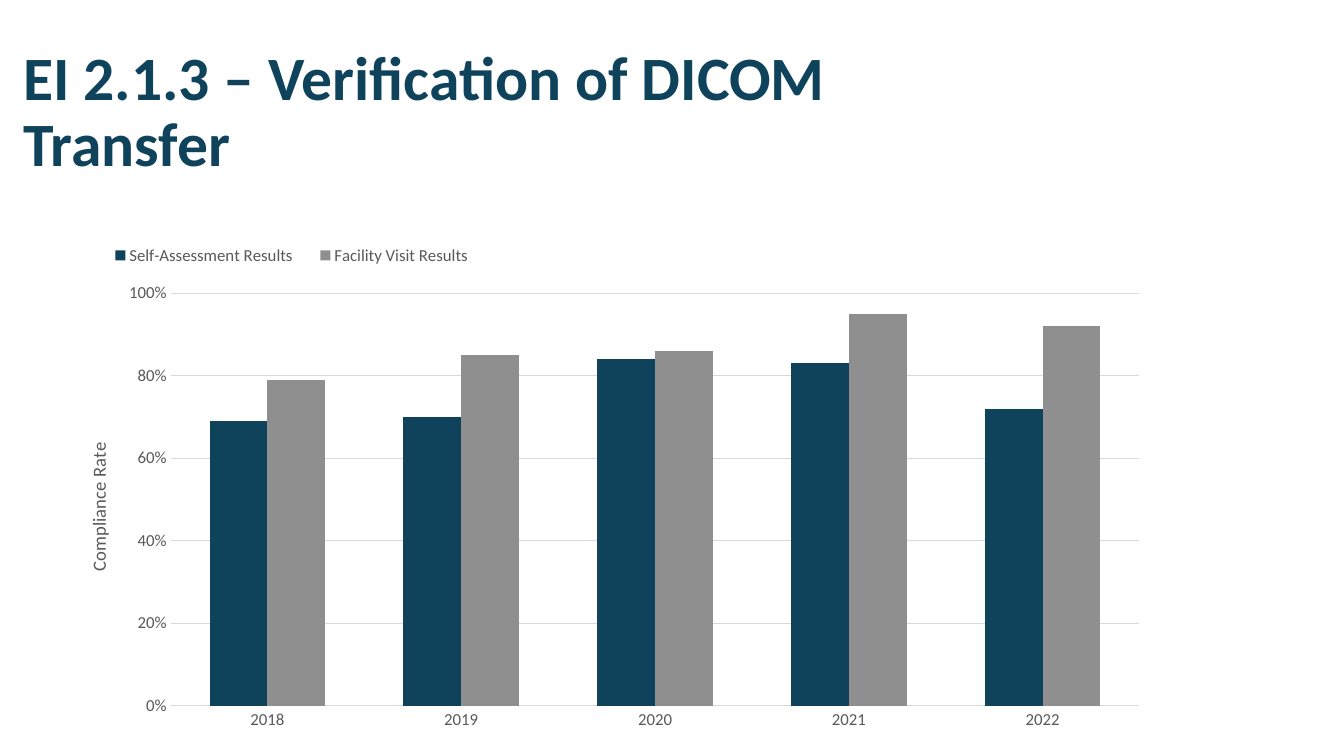
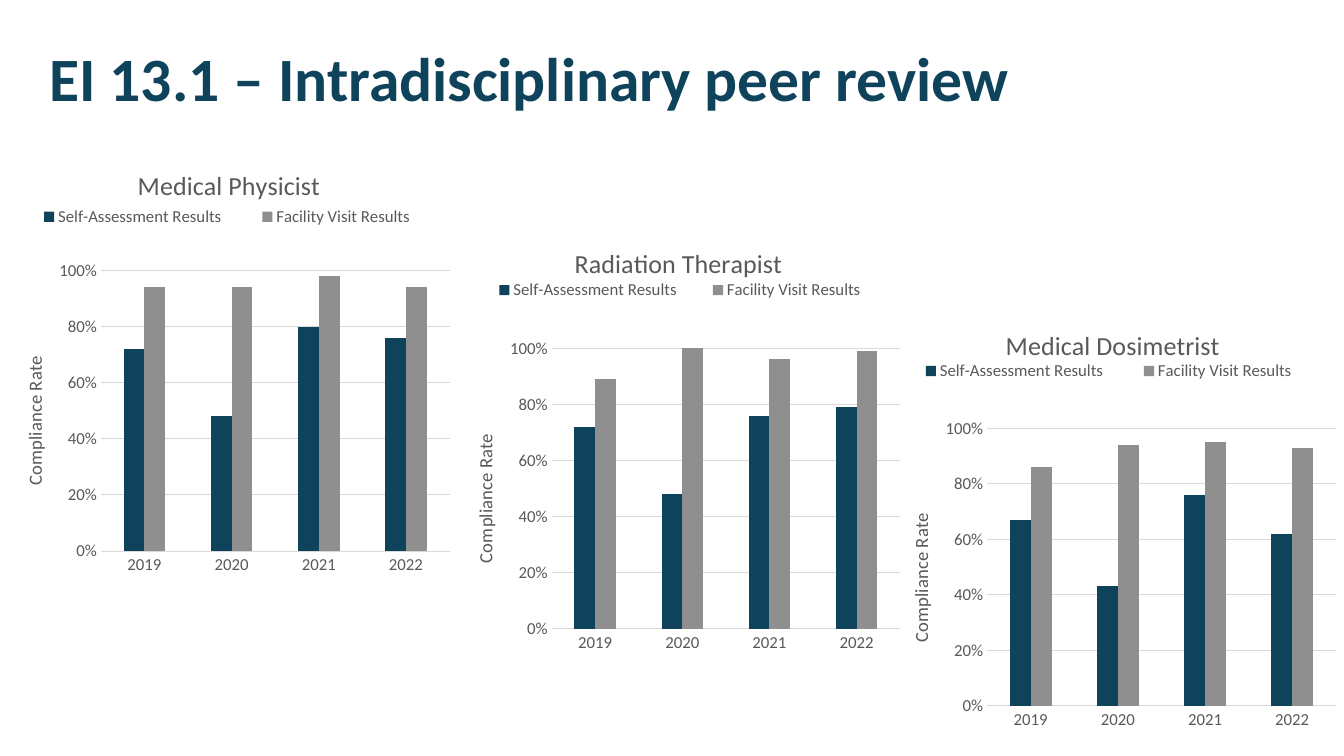
from dataclasses import dataclass
from typing import Optional

from lxml import etree
from pptx import Presentation
from pptx.chart.chart import Chart
from pptx.chart.data import CategoryChartData as ChartData
from pptx.dml.color import RGBColor as Rgb
from pptx.enum.chart import XL_CHART_TYPE as Kind
from pptx.enum.chart import XL_LEGEND_POSITION as Spot
from pptx.enum.chart import XL_TICK_MARK as Tick
from pptx.enum.text import MSO_ANCHOR as Anchor
from pptx.enum.text import MSO_AUTO_SIZE as Fit
from pptx.enum.text import PP_ALIGN as Align
from pptx.oxml.ns import qn
from pptx.slide import Slide
from pptx.util import Inches, Pt

COLORS = {"navy": "0F435B", "gray": "8F8F8F", "text": "595959", "grid": "D9D9D9"}
FONT = "Calibri"
SERIES = (("Self-Assessment Results", "navy"), ("Facility Visit Results", "gray"))
YEARS = ("2018", "2019", "2020", "2021", "2022")
TITLE_TOP = 0.02

Box = tuple[float, float, float, float]
Point = tuple[float, float]
Rates = tuple[float, ...]


@dataclass(frozen=True)
class Frame:
    """Parts of a chart, as shares of its width and height."""
    plot: Box
    label: Point
    gap: int


@dataclass(frozen=True)
class Bars:
    at: Box
    frame: Frame
    legend: Box
    own: Rates
    visit: Rates
    title: Optional[str] = None
    left: float = 0


@dataclass(frozen=True)
class Page:
    title: str
    at: Box
    charts: tuple[Bars, ...]


WIDE = Frame((0.1, 0.11, 0.88, 0.82), (0.02, 0.4), 135)
SMALL = Frame((0.22, 0.27, 0.76, 0.65), (0.04, 0.46), 219)

PAGES = (
    Page("EI 2.1.3 – Verification of DICOM Transfer", (0.13, 0.4, 9.86, 1.45), (
        Bars((0.6, 2.36, 10.92, 4.99), WIDE, (0.03, 0.01, 0.36, 0.05),
             (0.69, 0.7, 0.84, 0.83, 0.72), (0.79, 0.85, 0.86, 0.95, 0.92)),
    )),
    Page("EI 13.1 – Intradisciplinary peer review", (0.39, 0.08, 10.27, 1.45), (
        Bars((8.79, 3.11, 4.55, 4.23), SMALL, (0.01, 0.1, 0.95, 0.07),
             (0.67, 0.43, 0.76, 0.62), (0.86, 0.94, 0.95, 0.93),
             "Medical Dosimetrist", 0.25),
        Bars((0, 1.53, 4.55, 4.28), SMALL, (0.02, 0.11, 0.95, 0.07),
             (0.72, 0.48, 0.8, 0.76), (0.94, 0.94, 0.98, 0.94),
             "Medical Physicist", 0.29),
        Bars((4.47, 2.3, 4.55, 4.28), SMALL, (0.04, 0.1, 0.92, 0.07),
             (0.72, 0.48, 0.76, 0.79), (0.89, 1, 0.96, 0.99),
             "Radiation Therapist", 0.26),
    )),
)


def color(name: str) -> Rgb:
    return Rgb.from_string(COLORS[name])


def style(font, size: float, name: str = "text", bold: bool = False) -> None:
    font.name, font.size, font.bold = FONT, Pt(size), bold
    font.color.rgb = color(name)


def rule(line) -> None:
    line.color.rgb = color("grid")
    line.width = Pt(0.75)


def place(chart: Chart, part: str, index: int, box: tuple[float, ...]) -> None:
    """Fix a chart part at shares of the chart's size."""
    node = chart.element.xpath(f"c:chart/{part}")[0]
    for old in node.findall(qn("c:layout")):
        node.remove(old)
    layout = etree.Element(qn("c:layout"))
    manual = etree.SubElement(layout, qn("c:manualLayout"))
    pairs = [("xMode", "edge"), ("yMode", "edge"), *zip("xywh", box)]
    if part == "c:plotArea":
        pairs.insert(0, ("layoutTarget", "inner"))
    for tag, value in pairs:
        etree.SubElement(manual, qn(f"c:{tag}")).set("val", str(value))
    node.insert(index, layout)


def caption(holder, text: str, size: float) -> None:
    frame = holder.text_frame
    frame.text = text
    style(frame.paragraphs[0].runs[0].font, size)


def format_axes(chart: Chart) -> None:
    years, rates = chart.category_axis, chart.value_axis
    for axis in (years, rates):
        axis.major_tick_mark = axis.minor_tick_mark = Tick.NONE
        style(axis.tick_labels.font, 12)
    rule(years.format.line)
    rates.format.line.fill.background()
    rates.minimum_scale, rates.maximum_scale, rates.major_unit = 0, 1, 0.2
    rates.has_major_gridlines = True
    rule(rates.major_gridlines.format.line)
    rates.tick_labels.number_format = "0%"
    rates.tick_labels.number_format_is_linked = False
    caption(rates.axis_title, "Compliance Rate", 13.3)


def add_bars(slide: Slide, bars: Bars) -> None:
    data = ChartData(number_format="0%")
    data.categories = YEARS[-len(bars.own):]
    for (name, _), rates in zip(SERIES, (bars.own, bars.visit)):
        data.add_series(name, rates)
    chart = slide.shapes.add_chart(
        Kind.COLUMN_CLUSTERED, *map(Inches, bars.at), data).chart
    style(chart.font, 10)

    plot = chart.plots[0]
    plot.gap_width, plot.overlap = bars.frame.gap, 0
    plot.vary_by_categories = False
    for series, (_, name) in zip(plot.series, SERIES):
        series.format.fill.solid()
        series.format.fill.fore_color.rgb = color(name)

    format_axes(chart)
    place(chart, "c:plotArea", 0, bars.frame.plot)
    place(chart, "c:plotArea/c:valAx/c:title", 1, bars.frame.label)

    chart.has_legend = True
    chart.legend.position = Spot.TOP
    chart.legend.include_in_layout = False
    style(chart.legend.font, 12)
    place(chart, "c:legend", 1, bars.legend)

    chart.has_title = bars.title is not None
    if bars.title:
        caption(chart.chart_title, bars.title, 18.6)
        place(chart, "c:title", 1, (bars.left, TITLE_TOP))


def set_title(slide: Slide, page: Page) -> None:
    title = slide.shapes.title
    title.left, title.top, title.width, title.height = map(Inches, page.at)
    frame = title.text_frame
    frame.text = page.title
    frame.word_wrap, frame.auto_size = True, Fit.NONE
    frame.vertical_anchor = Anchor.MIDDLE
    line = frame.paragraphs[0]
    line.alignment, line.line_spacing = Align.LEFT, 0.9
    style(line.runs[0].font, 44, "navy", True)


def main() -> None:
    deck = Presentation()
    deck.slide_width, deck.slide_height = Inches(13.33), Inches(7.5)
    for page in PAGES:
        slide = deck.slides.add_slide(deck.slide_layouts.get_by_name("Title Only"))
        set_title(slide, page)
        for bars in page.charts:
            add_bars(slide, bars)
    deck.save("out.pptx")


if __name__ == "__main__":
    main()
